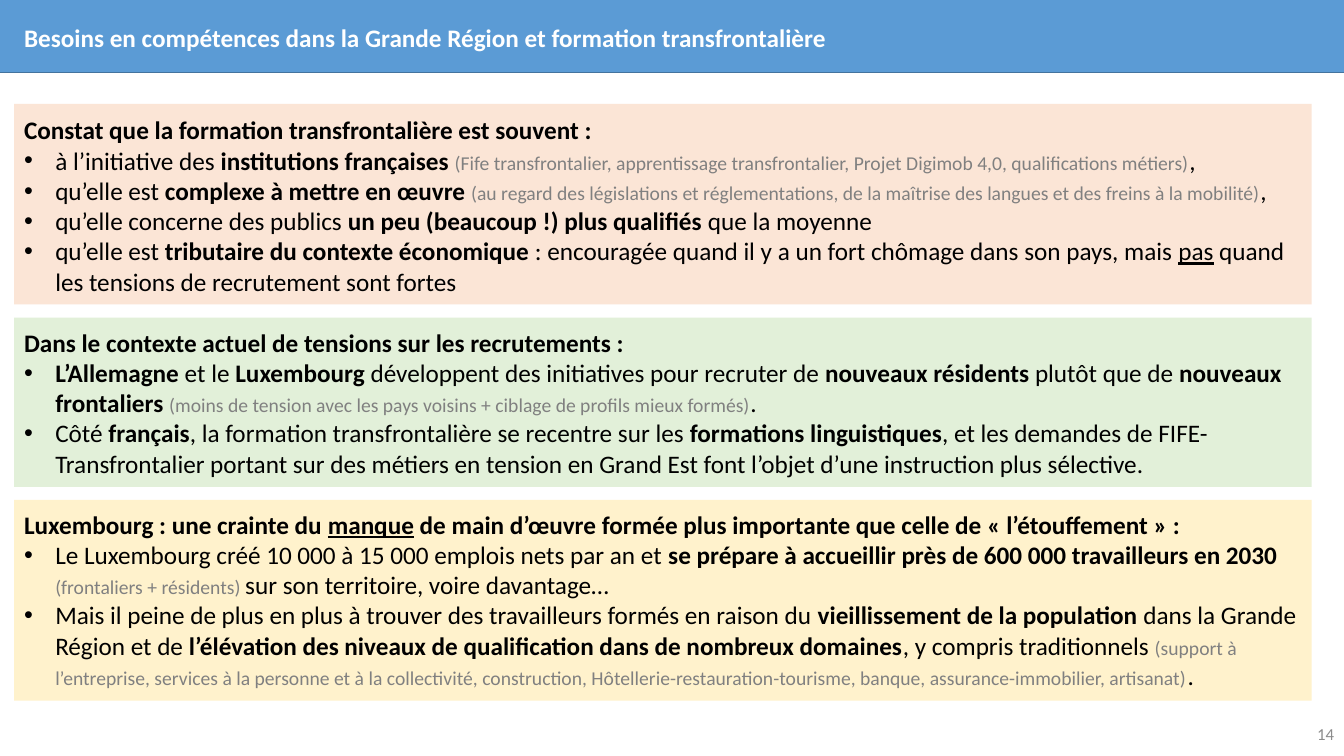
from pptx import Presentation
from pptx.dml.color import RGBColor
from pptx.enum.shapes import MSO_SHAPE as Shape
from pptx.enum.text import MSO_ANCHOR as Anchor, MSO_AUTO_SIZE as AutoSize, PP_ALIGN as Align
from pptx.oxml.ns import qn
from pptx.util import Inches, Pt
from lxml.etree import SubElement

WIDTH, HEIGHT = Inches(13.33), Inches(7.5)
COLUMN, ROW = WIDTH / 100, HEIGHT / 100
LEFT, SPAN = 1.05, 96.55
PANELS_TOP, PANEL_GAP, PANEL_PADDING, LINE_ROWS = 13.73, 1.74, 1.75, 4.13

BLACK = RGBColor(0x00, 0x00, 0x00)
WHITE = RGBColor(0xFF, 0xFF, 0xFF)
GREY = RGBColor(0x80, 0x80, 0x80)
PAGE_GREY = RGBColor(0x8C, 0x8C, 0x8C)
BLUE = RGBColor(0x5B, 0x9B, 0xD5)
DARK_BLUE = RGBColor(0x43, 0x73, 0x9E)
PEACH = RGBColor(0xFB, 0xE5, 0xD6)
GREEN = RGBColor(0xE2, 0xF0, 0xD9)
YELLOW = RGBColor(0xFF, 0xF2, 0xCC)

PLAIN = {"size": Pt(18), "name": "Calibri", "color": BLACK}
BOLD = {**PLAIN, "bold": True}
UNDERLINED = {**PLAIN, "underline": True}
BOLD_UNDERLINED = {**BOLD, "underline": True}
NOTE = {**PLAIN, "size": Pt(14), "color": GREY}
TITLE = {**BOLD, "color": WHITE}
PAGE_NUMBER = {**PLAIN, "size": Pt(12), "color": PAGE_GREY}

SECTIONS = [
    (PEACH, 6, [("Constat que la formation transfrontalière est souvent :", BOLD)], [
        [("à l’initiative des ", PLAIN), ("institutions françaises ", BOLD),
         ("(Fife transfrontalier, apprentissage transfrontalier, Projet Digimob 4,0, "
          "qualifications métiers)", NOTE), (",", PLAIN)],
        [("qu’elle est ", PLAIN), ("complexe à mettre en œuvre ", BOLD),
         ("(au regard des législations et réglementations, de la maîtrise des langues "
          "et des freins à la mobilité)", NOTE), (",", PLAIN)],
        [("qu’elle concerne des publics ", PLAIN),
         ("un peu (beaucoup !) plus qualifiés ", BOLD), ("que la moyenne", PLAIN)],
        [("qu’elle est ", PLAIN), ("tributaire du contexte économique", BOLD),
         (" : encouragée quand il y a un fort chômage dans son pays, mais ", PLAIN),
         ("pas", UNDERLINED), (" quand les tensions de recrutement sont fortes", PLAIN)],
    ]),
    (GREEN, 5, [("Dans le contexte actuel de tensions sur les recrutements :", BOLD)], [
        [("L’Allemagne", BOLD), (" et le ", PLAIN), ("Luxembourg", BOLD),
         (" développent des initiatives pour recruter de ", PLAIN),
         ("nouveaux résidents ", BOLD), ("plutôt que de ", PLAIN),
         ("nouveaux frontaliers ", BOLD),
         ("(moins de tension avec les pays voisins + ciblage de profils mieux formés)", NOTE),
         (".", PLAIN)],
        [("Côté ", PLAIN), ("français", BOLD),
         (", la formation transfrontalière se recentre sur les ", PLAIN),
         ("formations linguistiques", BOLD),
         (", et les demandes de FIFE-Transfrontalier portant sur des métiers en tension "
          "en Grand Est font l’objet d’une instruction plus sélective.", PLAIN)],
    ]),
    (YELLOW, 6, [("Luxembourg : une crainte du ", BOLD), ("manque", BOLD_UNDERLINED),
                 (" de main d’œuvre formée plus importante que celle de "
                  "« l’étouffement » :", BOLD)], [
        [("Le Luxembourg créé 10 000 à 15 000 emplois nets par an et ", PLAIN),
         ("se prépare à accueillir près de 600 000 travailleurs en 2030 ", BOLD),
         ("(frontaliers + résidents) ", NOTE),
         ("sur son territoire, voire davantage…", PLAIN)],
        [("Mais il peine de plus en plus à trouver des travailleurs formés en raison du ", PLAIN),
         ("vieillissement de la population ", BOLD), ("dans la Grande Région et de ", PLAIN),
         ("l’élévation des niveaux de qualification dans de nombreux domaines", BOLD),
         (", y compris traditionnels ", PLAIN),
         ("(support à l’entreprise, services à la personne et à la collectivité, construction, "
          "Hôtellerie-restauration-tourisme, banque, assurance-immobilier, artisanat)", NOTE),
         (".", PLAIN)],
    ]),
]


def place(left, top, width, height):
    return [round(length) for length in
            (left * COLUMN, top * ROW, width * COLUMN, height * ROW)]


def add_rectangle(page, area, fill, line=None):
    shape = page.shapes.add_shape(Shape.RECTANGLE, *place(*area))
    shape.shadow.inherit = False
    shape.fill.solid()
    shape.fill.fore_color.rgb = fill
    if line is None:
        shape.line.fill.background()
    else:
        shape.line.color.rgb = line
        shape.line.width = Pt(1)


def add_text_box(page, area, **frame_format):
    frame = page.shapes.add_textbox(*place(*area)).text_frame
    for name, value in {"word_wrap": True, **frame_format}.items():
        setattr(frame, name, value)
    return frame


def write(para, spans, **para_format):
    for name, value in para_format.items():
        setattr(para, name, value)
    for text, style in spans:
        span = para.add_run()
        span.text = text
        for name, value in style.items():
            if name == "color":
                span.font.color.rgb = value
            else:
                setattr(span.font, name, value)


def add_bullet(para):
    properties = para._p.get_or_add_pPr()
    properties.set("marL", str(Inches(0.31)))
    properties.set("indent", str(-Inches(0.31)))
    SubElement(properties, qn("a:buFont"), typeface="Arial")
    SubElement(properties, qn("a:buChar"), char="•")


def add_panels(page):
    top = PANELS_TOP
    for fill, lines, _, _ in SECTIONS:
        height = PANEL_PADDING + lines * LINE_ROWS
        add_rectangle(page, (LEFT, top, SPAN, height), fill)
        top += height + PANEL_GAP


def add_findings(page):
    frame = add_text_box(page, (LEFT, 14.53, SPAN, 78.13),
                         auto_size=AutoSize.SHAPE_TO_FIT_TEXT)
    for index, (_, _, heading, points) in enumerate(SECTIONS):
        if index:
            write(frame.add_paragraph(), heading, space_before=Pt(22))
        else:
            write(frame.paragraphs[0], heading)
        for point in points:
            para = frame.add_paragraph()
            write(para, point)
            add_bullet(para)


def add_label(page, area, text, style, anchor, **para_format):
    frame = add_text_box(page, area, vertical_anchor=anchor)
    write(frame.paragraphs[0], [(text, style)], **para_format)


def main():
    deck = Presentation()
    deck.slide_width, deck.slide_height = WIDTH, HEIGHT
    page = deck.slides.add_slide(deck.slide_layouts[6])
    add_panels(page)
    add_findings(page)
    add_rectangle(page, (-3, -1.47, 104.58, 11.07), BLUE, DARK_BLUE)
    add_label(page, (LEFT, 2.93, 75, 4.67),
              "Besoins en compétences dans la Grande Région et formation transfrontalière",
              TITLE, Anchor.BOTTOM, line_spacing=0.9)
    add_label(page, (96.55, 94.4, 3.45, 5.33), "14", PAGE_NUMBER, Anchor.MIDDLE,
              alignment=Align.RIGHT)
    deck.save("out.pptx")


if __name__ == "__main__":
    main()
